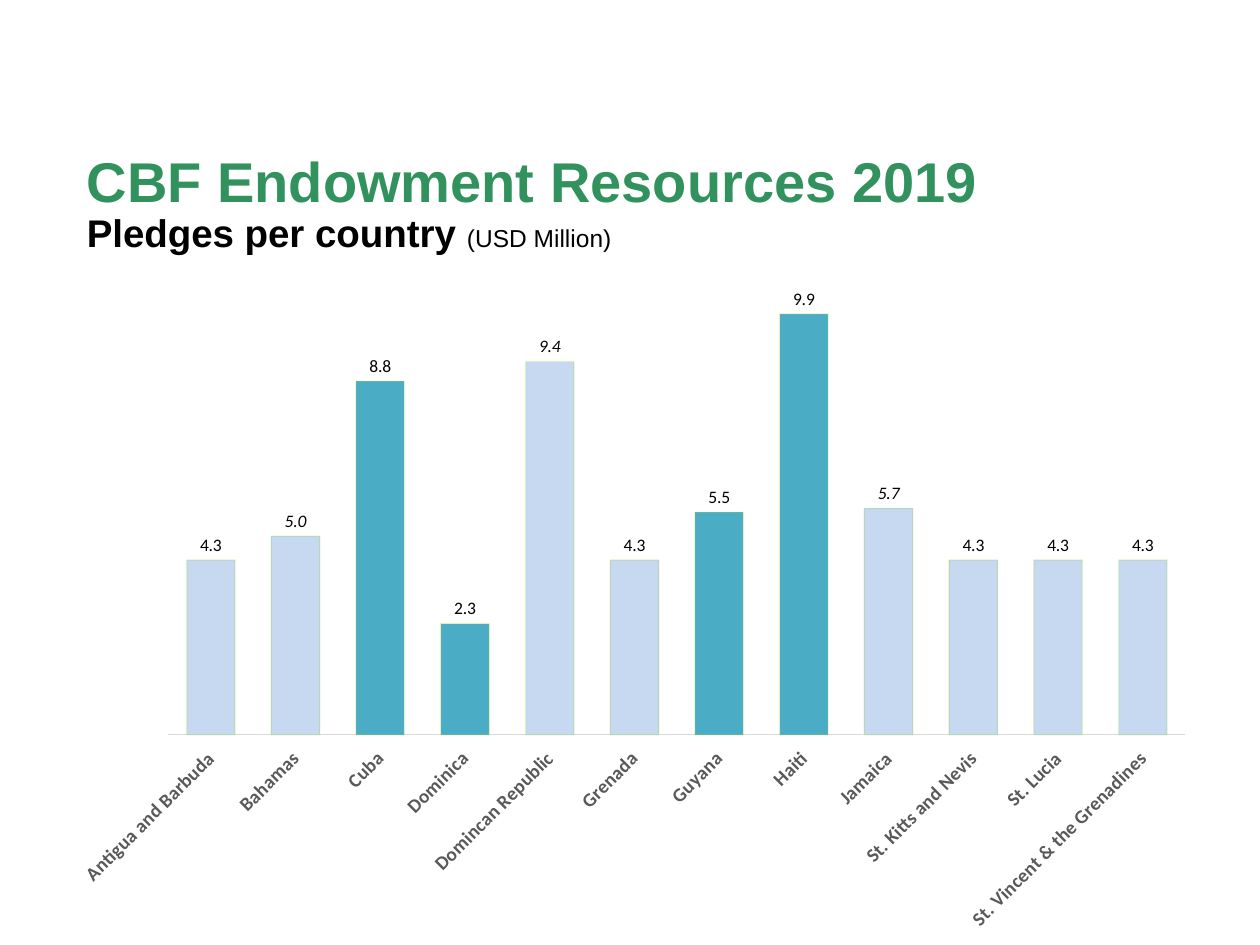
from lxml import etree
from pptx import Presentation
from pptx import util as u
from pptx.chart.data import CategoryChartData
from pptx.dml.color import RGBColor
from pptx.enum import chart as ch, text
from pptx.oxml.ns import qn

PLEDGES = [
    ("Antigua and Barbuda", 4.4, "4.3"),
    ("Bahamas", 5, None),
    ("Cuba", 8.9, "8.8"),
    ("Dominica", 2.8, "2.3"),
    ("Domincan Republic", 9.4, None),
    ("Grenada", 4.4, "4.3"),
    ("Guyana", 5.6, "5.5"),
    ("Haiti", 10.6, "9.9"),
    ("Jamaica", 5.7, None),
    ("St. Kitts and Nevis", 4.4, "4.3"),
    ("St. Lucia", 4.4, "4.3"),
    ("St. Vincent & the Grenadines", 4.4, "4.3"),
]
PAID = {"Cuba", "Dominica", "Guyana", "Haiti"}
PLOT = {"x": 0.1, "y": 0.02, "w": 0.88, "h": 0.68}


def paint(hue):
    return RGBColor.from_string(hue)


def assign(item, **vals):
    for key, val in vals.items():
        setattr(item, key, val)


class Deck:
    green, black, grey = "32925E", "000000", "595959"
    pale, teal, edge, rule = "C6D9F1", "4BACC6", "92D050", "D9D9D9"

    def __init__(self, wide, high):
        self.prs = Presentation()
        assign(self.prs, slide_width=u.Inches(wide), slide_height=u.Inches(high))
        self.slide = self.prs.slides.add_slide(self.prs.slide_layouts[6])

    def font(self, font, hue, **vals):
        assign(font, **vals)
        font.color.rgb = paint(hue)

    def title(self, box, lines):
        frame = self.slide.shapes.add_textbox(*map(u.Inches, box)).text_frame
        assign(frame, word_wrap=True, vertical_anchor=text.MSO_ANCHOR.MIDDLE)
        para = frame.paragraphs[0]
        para.line_spacing = 0.9
        for row, runs in enumerate(lines):
            if row:
                para.add_line_break()
            for words, size, hue, bold in runs:
                run = para.add_run()
                run.text = words
                self.font(run.font, hue, name="Arial", size=u.Pt(size), bold=bold)

    def chart(self, box, rows):
        data = CategoryChartData(number_format="0.0")
        data.categories = [name for name, _, _ in rows]
        data.add_series("Series 1", [val for _, val, _ in rows])
        chart = self.slide.shapes.add_chart(
            ch.XL_CHART_TYPE.COLUMN_CLUSTERED, *map(u.Inches, box), data).chart
        assign(chart, has_legend=False, has_title=False)
        self.font(chart.font, self.black, name="Calibri", size=u.Pt(10))
        self.axes(chart)
        self.place(chart)
        plot = chart.plots[0]
        assign(plot, gap_width=75, vary_by_categories=False, has_data_labels=True)
        assign(plot.data_labels, show_value=True, number_format="0.0",
               number_format_is_linked=False,
               position=ch.XL_LABEL_POSITION.OUTSIDE_END)
        bars = plot.series[0]
        self.fill(bars.format, self.edge)
        for idx, (name, _, label) in enumerate(rows):
            point = bars.points[idx]
            self.fill(point.format, self.teal if name in PAID else self.pale)
            self.label(point.data_label, label)

    def axes(self, chart):
        vals, cats = chart.value_axis, chart.category_axis
        assign(vals, visible=False, has_major_gridlines=False,
               minimum_scale=0, maximum_scale=12)
        assign(cats, major_tick_mark=ch.XL_TICK_MARK.NONE,
               tick_label_position=ch.XL_TICK_LABEL_POSITION.LOW)
        self.font(cats.tick_labels.font, self.grey,
                  name="Calibri", size=u.Pt(11), bold=True)
        cats.format.line.color.rgb = paint(self.rule)
        cats.format.line.width = u.Pt(0.75)
        body = chart.element.xpath(".//c:catAx/c:txPr/a:bodyPr")[0]
        body.set("rot", "-2700000")
        body.set("vert", "horz")

    def place(self, chart):
        area = chart.element.xpath(".//c:plotArea")[0]
        for old in area.findall(qn("c:layout")):
            area.remove(old)
        layout = etree.Element(qn("c:layout"))
        area.insert(0, layout)
        spot = etree.SubElement(layout, qn("c:manualLayout"))
        vals = {"layoutTarget": "inner", "xMode": "edge", "yMode": "edge", **PLOT}
        for tag, val in vals.items():
            etree.SubElement(spot, qn("c:" + tag)).set("val", str(val))

    def fill(self, form, hue):
        form.fill.solid()
        form.fill.fore_color.rgb = paint(hue)
        form.line.color.rgb = paint(self.edge)
        form.line.width = u.Pt(0.75)
        tone = form.line._ln.find(".//" + qn("a:srgbClr"))
        etree.SubElement(tone, qn("a:alpha")).set("val", "30000")

    def label(self, tag, words):
        if words:
            run = tag.text_frame.paragraphs[0].add_run()
            run.text = words
            font = run.font
        else:
            font = tag.font
            font.italic = True
        self.font(font, self.black, name="Calibri", size=u.Pt(10))
        tag.position = ch.XL_LABEL_POSITION.OUTSIDE_END


def main():
    deck = Deck(10, 7.5)
    deck.title((0.59, 0.9, 8.62, 1.45), [
        [("CBF Endowment Resources 2019", 32, deck.green, True)],
        [("Pledges per country ", 22, deck.black, True),
         ("(USD Million)", 14, deck.black, False)],
    ])
    deck.chart((0.42, 1.94, 9.17, 5.56), PLEDGES)
    deck.prs.save("out.pptx")


if __name__ == "__main__":
    main()
